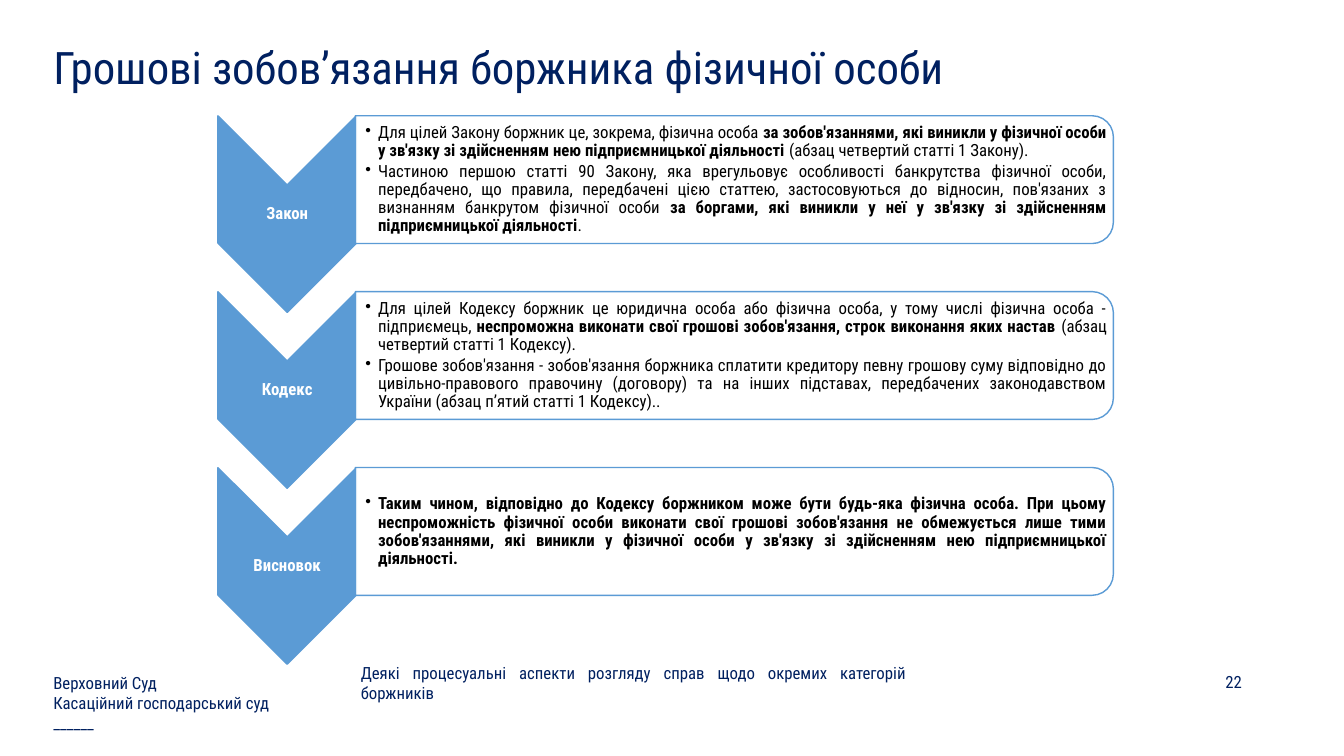
from lxml import etree
from pptx import Presentation
from pptx.dml.color import RGBColor
from pptx.enum.shapes import MSO_SHAPE as SHAPE
from pptx.enum.text import MSO_ANCHOR as ANCHOR, PP_ALIGN as ALIGN
from pptx.oxml.ns import qn
from pptx.util import Pt

NAVY = RGBColor(0x00, 0x20, 0x60)
BLUE = RGBColor(0x5B, 0x9B, 0xD5)
WHITE = RGBColor(0xFF, 0xFF, 0xFF)
BLACK = RGBColor(0x00, 0x00, 0x00)

ROW_PITCH = 125.64

# Each row: label, then paragraphs made of (text, bold) runs
ROWS = [
    ("Закон", [
        [("Для цілей Закону боржник це, зокрема, фізична особа ", False),
         ("за зобов'язаннями, які виникли у фізичної особи у зв'язку зі "
          "здійсненням нею підприємницької діяльності ", True),
         ("(абзац четвертий статті 1 Закону).", False)],
        [("Частиною першою статті 90 Закону, яка врегульовує особливості "
          "банкрутства фізичної особи, передбачено, що правила, передбачені "
          "цією статтею, застосовуються до відносин, пов'язаних з визнанням "
          "банкрутом фізичної особи ", False),
         ("за боргами, які виникли у неї у зв'язку зі здійсненням "
          "підприємницької діяльності", True),
         (".", False)],
    ]),
    ("Кодекс", [
        [("Для цілей Кодексу боржник це юридична особа або фізична особа, "
          "у тому числі фізична особа - підприємець, ", False),
         ("неспроможна виконати свої грошові зобов'язання, строк виконання "
          "яких настав", True),
         (" (абзац четвертий статті 1 Кодексу).", False)],
        [("Грошове зобов'язання - зобов'язання боржника сплатити кредитору "
          "певну грошову суму відповідно до цивільно-правового правочину "
          "(договору) та на інших підставах, передбачених законодавством "
          "України (абзац п’ятий статті 1 Кодексу)..", False)],
    ]),
    ("Висновок", [
        [("Таким чином, відповідно до Кодексу боржником може бути будь-яка "
          "фізична особа. При цьому неспроможність фізичної особи виконати "
          "свої грошові зобов'язання не обмежується лише тими "
          "зобов'язаннями, які виникли у фізичної особи у зв'язку зі "
          "здійсненням нею підприємницької діяльності.", True)],
    ]),
]

prs = Presentation()
prs.slide_width, prs.slide_height = Pt(960), Pt(540)
s = prs.slides.add_slide(prs.slide_layouts[6])


def add_text(box, paragraphs, color, size=12, align=ALIGN.LEFT, spacing=None,
             after=0, insets=(7.2, 3.6, 7.2, 3.6)):
    """Add a middle-anchored text box; paragraphs are lists of (text, bold)."""
    tf = s.shapes.add_textbox(*map(Pt, box)).text_frame
    tf.word_wrap = True
    tf.vertical_anchor = ANCHOR.MIDDLE
    tf.margin_left, tf.margin_top, tf.margin_right, tf.margin_bottom = map(Pt, insets)
    for i, runs in enumerate(paragraphs):
        p = tf.add_paragraph() if i else tf.paragraphs[0]
        p.alignment = align
        p.line_spacing = spacing
        p.space_after = Pt(after)
        for text, bold in runs:
            r = p.add_run()
            r.text = text
            r.font.name = "Roboto Condensed"
            r.font.size = Pt(size)
            r.font.bold = bold
            r.font.color.rgb = color
    return tf


def add_rotated(kind, box, fill):
    sp = s.shapes.add_shape(kind, *map(Pt, box))
    sp.rotation = 90
    sp.shadow.inherit = False
    sp.fill.solid()
    sp.fill.fore_color.rgb = fill
    sp.line.color.rgb = BLUE
    sp.line.width = Pt(1)
    return sp


add_text((31, 30.2, 889, 40.3),
         [[("Грошові зобов’язання боржника фізичної особи", False)]],
         NAVY, size=32, spacing=0.9)
add_text((678.2, 475.2, 216, 23.8), [[("22", False)]], NAVY, align=ALIGN.RIGHT)
add_text((31, 475.2, 182.9, 54),
         [[(line, False)] for line in
          ("Верховний Суд", "Касаційний господарський суд", "______")], NAVY)
add_text((250.6, 475.2, 403.9, 25.2),
         [[("Деякі процесуальні аспекти розгляду справ щодо окремих категорій "
            "боржників", False)]], NAVY, align=ALIGN.JUSTIFY)

for i, (label, paragraphs) in enumerate(ROWS):
    dy = i * ROW_PITCH
    chevron = add_rotated(SHAPE.CHEVRON, (134.9, 103.5 + dy, 140.4, 98.9), BLUE)
    chevron.adjustments[0] = 0.5
    add_text((155.7, 131.7 + dy, 98.9, 42.5), [[(label, True)]], WHITE,
             align=ALIGN.CENTER, spacing=0.9, insets=(0.6,) * 4)

    panel = add_rotated(SHAPE.ROUND_2_SAME_RECTANGLE,
                        (478.9, -142.4 + dy, 91.3, 541.4), WHITE)
    white = panel.fill._xPr.find(qn("a:solidFill"))[0]
    etree.SubElement(white, qn("a:alpha"), val="90000")

    tf = add_text((254.4, 87.1 + dy, 537, 82.8), paragraphs, BLACK,
                  align=ALIGN.JUSTIFY, spacing=0.9, after=1.8,
                  insets=(6.7, 0.6, 0.6, 0.6))
    for p in tf.paragraphs:
        pPr = p._p.get_or_add_pPr()
        pPr.set("marL", str(Pt(9)))
        pPr.set("indent", str(Pt(-9)))
        etree.SubElement(pPr, qn("a:buChar"), char="•")

prs.save("out.pptx")
